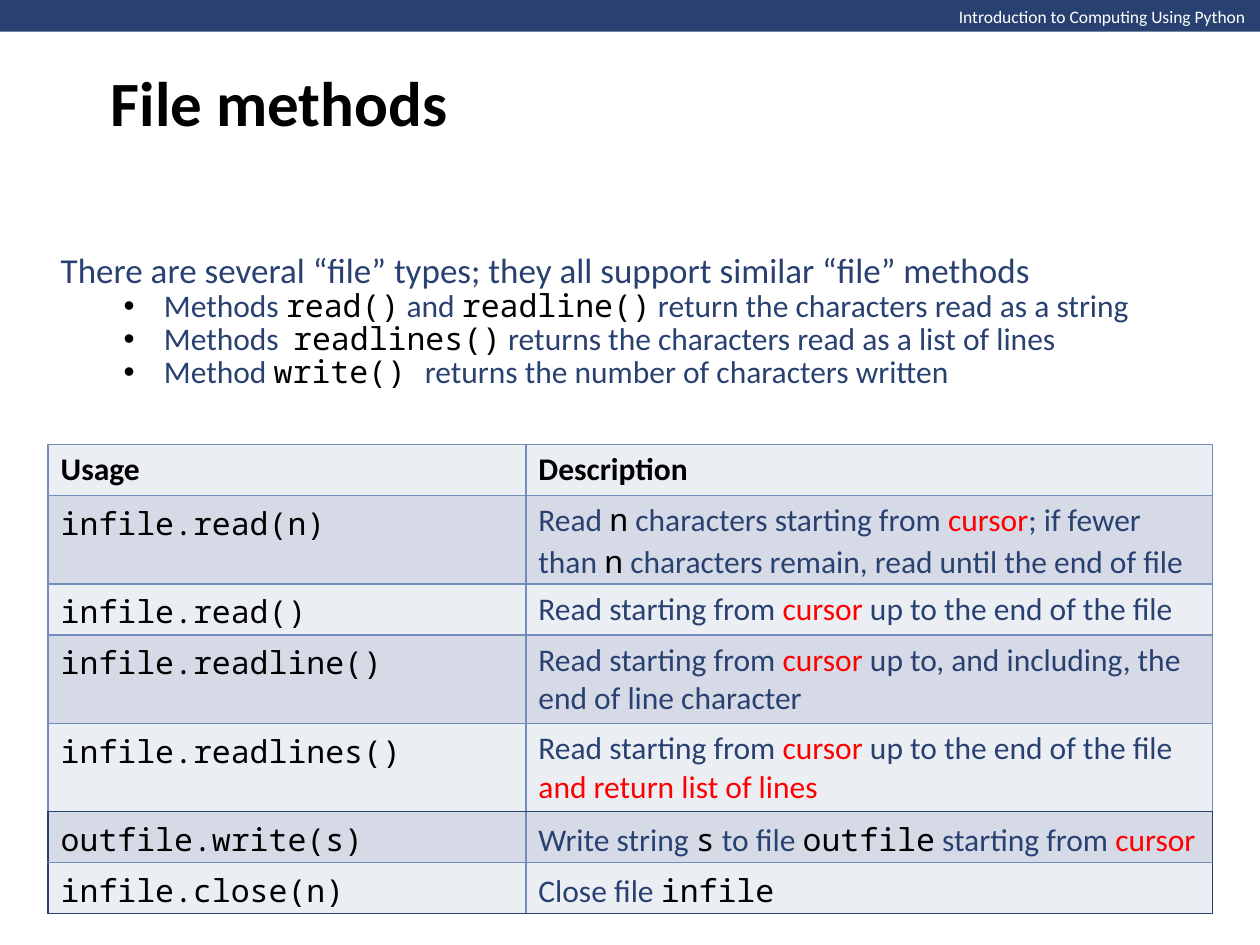
from lxml.etree import SubElement
from pptx import Presentation
from pptx.dml.color import RGBColor as Rgb
from pptx.enum.shapes import MSO_SHAPE as Kind
from pptx.enum.text import MSO_ANCHOR as Anchor, MSO_AUTO_SIZE as Fit, PP_ALIGN as Align
from pptx.oxml.ns import qn
from pptx.util import Cm, Pt

HUES = {"navy": "294171", "white": "FFFFFF", "black": "000000", "red": "FF0000",
        "rule": "748CBC", "pale": "EBEEF3", "band": "D6DAE7"}

# Each kind of run: font, colour, bold
RUNS = {"text": ("Calibri", "navy", False),
        "code": ("Noto Sans Mono", "black", False),
        "mark": ("Calibri", "red", False),
        "head": ("Calibri", "black", True),
        "bar": ("Calibri", "white", False)}


def text(words):
    return words, "text"


def code(words):
    return words, "code"


def mark(words):
    return words, "mark"


def head(words):
    return words, "head"


class Deck:
    def __init__(self, wide, high):
        self.prs = Presentation()
        self.prs.slide_width, self.prs.slide_height = Cm(wide), Cm(high)
        self.slide = self.prs.slides.add_slide(self.prs.slide_layouts[1])

    def hue(self, name):
        return Rgb.from_string(HUES[name])

    def place(self, shape, box):
        shape.left, shape.top, shape.width, shape.height = map(Cm, box)

    def add_runs(self, para, runs, size):
        for words, kind in runs:
            run = para.add_run()
            run.text = words
            font, (name, hue, bold) = run.font, RUNS[kind]
            font.name, font.size, font.bold = name, Pt(size), bold
            font.color.rgb = self.hue(hue)

    def bar(self, box, hue):
        shape = self.slide.shapes.add_shape(Kind.RECTANGLE, *map(Cm, box))
        shape.shadow.inherit = False
        shape.fill.solid()
        shape.fill.fore_color.rgb = self.hue(hue)
        shape.line.fill.background()

    def label(self, box, runs, size):
        frame = self.slide.shapes.add_textbox(*map(Cm, box)).text_frame
        frame.word_wrap = False
        self.add_runs(frame.paragraphs[0], runs, size)

    def title(self, box, runs, size):
        shape = self.slide.shapes.title
        self.place(shape, box)
        frame = shape.text_frame
        frame.auto_size, frame.vertical_anchor = Fit.NONE, Anchor.MIDDLE
        frame.paragraphs[0].alignment = Align.LEFT
        self.add_runs(frame.paragraphs[0], runs, size)

    def body(self, box, lead, items):
        shape = self.slide.placeholders[1]
        self.place(shape, box)
        frame = shape.text_frame
        frame.auto_size, frame.vertical_anchor = Fit.NONE, Anchor.MIDDLE
        for i, runs in enumerate([lead] + items):
            para = frame.add_paragraph() if i else frame.paragraphs[0]
            para.level = 1 if i else 0
            para.line_spacing = 0.88
            para.space_before = para.space_after = Pt(0)
            self.bullet(para, i > 0)
            self.add_runs(para, runs, 18 if i else 20)

    def bullet(self, para, shown):
        props = para._p.get_or_add_pPr()
        props.set("marL", str(Cm(2.08) if shown else 0))
        props.set("indent", str(Cm(-0.81) if shown else 0))
        if not shown:
            SubElement(props, qn("a:buNone"))
            return
        tint = SubElement(props, qn("a:buClr"))
        SubElement(tint, qn("a:srgbClr"), val=HUES["black"])
        SubElement(props, qn("a:buFont"), typeface="Arial")
        SubElement(props, qn("a:buChar"), char="•")

    def edges(self, cell, hues):
        props = cell._tc.get_or_add_tcPr()
        for side, hue in zip("LRTB", hues):
            line = SubElement(props, qn("a:ln" + side), w=str(Pt(1)))
            fill = SubElement(line, qn("a:solidFill"))
            SubElement(fill, qn("a:srgbClr"), val=HUES[hue])

    def table(self, box, cols, rows, tall, dark, size):
        """Rows in tall hold two lines; rows from dark on have a navy outline."""
        grid = self.slide.shapes.add_table(len(rows), len(cols), *map(Cm, box)).table
        for col, wide in zip(grid.columns, cols):
            col.width = Cm(wide)
        last = len(rows) - 1
        for r, row in enumerate(rows):
            grid.rows[r].height = Cm(1.78 if r in tall else 1.03)
            for c, runs in enumerate(row):
                cell = grid.cell(r, c)
                low = r >= dark
                navy = (low and c == 0, low and c == len(cols) - 1,
                        r == dark, r in (dark - 1, last))
                self.edges(cell, ["navy" if n else "rule" for n in navy])
                cell.fill.solid()
                cell.fill.fore_color.rgb = self.hue("band" if r % 2 else "pale")
                # Two lines with code need a tighter top to fit the row
                tight = c == 1 and r in tall and any(k == "code" for _, k in runs)
                cell.margin_top = Cm(0.04 if tight else 0.13)
                cell.margin_bottom = Cm(0)
                self.add_runs(cell.text_frame.paragraphs[0], runs, size)

    def save(self):
        self.prs.save("out.pptx")


ITEMS = [
    [text("Methods "), code("read()"), text(" and "), code("readline()"),
     text(" return the characters read as a string")],
    [text("Methods  "), code("readlines()"),
     text(" returns the characters read as a list of lines")],
    [text("Method "), code("write() "), text("returns the number of characters written")],
]

START = [text("Read starting from "), mark("cursor ")]
ROWS = [
    ([head("Usage")], [head("Description")]),
    ([code("infile.read(n)")],
     [text("Read "), code("n"), text(" characters starting from "), mark("cursor"),
      text("; if fewer than "), code("n"),
      text(" characters remain, read until the end of file")]),
    ([code("infile.read()")], START + [text("up to the end of the file")]),
    ([code("infile.readline()")],
     START + [text("up to, and including, the end of line character")]),
    ([code("infile.readlines()")],
     START + [text("up to the end of the file "), mark("and return list of lines")]),
    ([code("outfile.write(s)")],
     [text("Write string "), code("s"), text(" to file "), code("outfile"),
      text(" starting from "), mark("cursor")]),
    ([code("infile.close(n)")], [text("Close file "), code("infile")]),
]


def main():
    deck = Deck(25.4, 19.05)
    deck.bar((0, 0, 25.43, 0.64), "navy")
    deck.label((19.08, 0, 6.35, 0.69),
               [("Introduction to Computing Using Python", "bar")], 10)
    deck.title((1.98, 0, 21.59, 4.09), [head("File methods")], 36)
    deck.table((0.97, 8.96, 23.47, 9.46), (9.63, 13.84), ROWS,
               tall=(1, 3, 4), dark=5, size=18)
    deck.body((0.97, 4.78, 23.47, 3.43),
              [text("There are several “file” types; they all support similar “file” methods")],
              ITEMS)
    deck.save()


if __name__ == "__main__":
    main()
